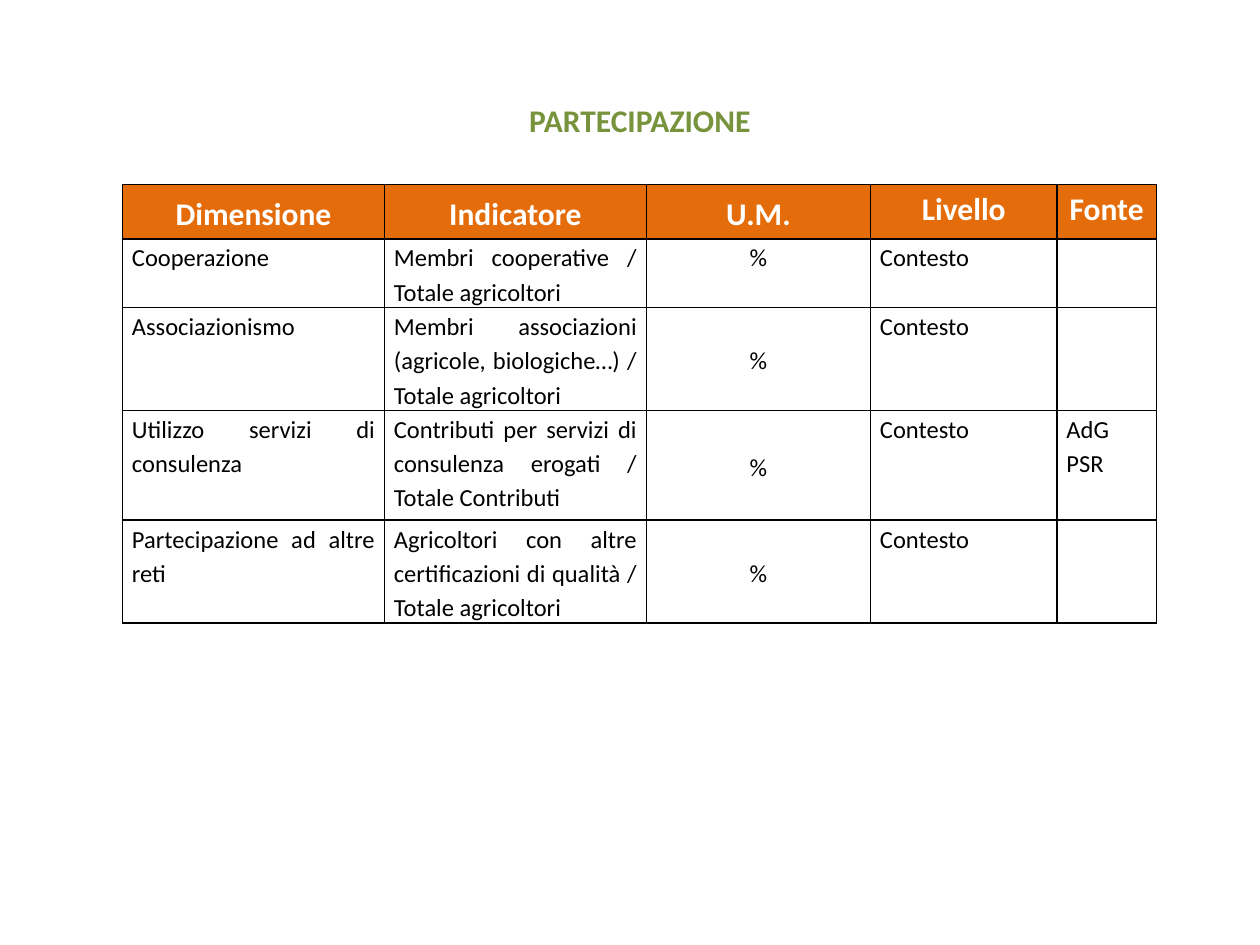
import pptx
import pptx.util
import pptx.dml.color
import pptx.enum.text
import pptx.oxml
import pptx.oxml.ns

Cm = pptx.util.Cm
Pt = pptx.util.Pt
Align = pptx.enum.text.PP_ALIGN
Anchor = pptx.enum.text.MSO_ANCHOR

colors = {"title": "77933C", "header": "E46C0A", "header_text": "FFFFFF",
          "text": "000000", "border": "000000"}


def add_span(para, text, size, color, bold):
    span = para.add_run()
    span.text = text
    span.font.name = "Calibri"
    span.font.size = Pt(size)
    span.font.bold = bold
    span.font.color.rgb = pptx.dml.color.RGBColor.from_string(colors[color])


def add_borders(cell):
    properties = cell._tc.get_or_add_tcPr()
    for side in ("lnL", "lnR", "lnT", "lnB"):
        properties.append(pptx.oxml.parse_xml(
            f'<a:{side} {pptx.oxml.ns.nsdecls("a")} w="{Pt(1)}"><a:solidFill>'
            f'<a:srgbClr val="{colors["border"]}"/></a:solidFill></a:{side}>'))


deck = pptx.Presentation()
deck.slide_width = Cm(25.4)
deck.slide_height = Cm(19.05)
page = deck.slides.add_slide(deck.slide_layouts[5])

title = page.shapes.title
title.left, title.top, title.width, title.height = Cm(6.5), Cm(1.9), Cm(12.8), Cm(1.02)
title.text_frame.vertical_anchor = Anchor.MIDDLE
title_para = title.text_frame.paragraphs[0]
title_para.alignment = Align.CENTER
add_span(title_para, "PARTECIPAZIONE", 18, "title", True)

rows = [
    ("Dimensione", "Indicatore", "U.M.", "Livello", "Fonte"),
    ("Cooperazione", "Membri cooperative / Totale agricoltori", "%", "Contesto", ""),
    ("Associazionismo", "Membri associazioni (agricole, biologiche…) / Totale agricoltori",
     "%", "Contesto", ""),
    ("Utilizzo servizi di consulenza",
     "Contributi per servizi di consulenza erogati / Totale Contributi",
     "%", "Contesto", "AdG PSR"),
    ("Partecipazione ad altre reti",
     "Agricoltori con altre certificazioni di qualità / Totale agricoltori",
     "%", "Contesto", ""),
]
column_widths = [5.28, 5.28, 4.52, 3.76, 2]
row_heights = [1.1, 1.38, 2.07, 2.21, 2.07]
middle_cells = {(0, 0), (0, 1), (0, 2), (2, 2), (3, 2), (4, 2)}

frame = page.shapes.add_table(len(rows), len(column_widths), Cm(2.47), Cm(3.72),
                              Cm(sum(column_widths)), Cm(sum(row_heights)))
table = frame.table
table.first_row = False
table.horz_banding = False
for column, width in zip(table.columns, column_widths):
    column.width = Cm(width)
for row, height in zip(table.rows, row_heights):
    row.height = Cm(height)

for r, texts in enumerate(rows):
    header = r == 0
    for c, text in enumerate(texts):
        cell = table.cell(r, c)
        add_borders(cell)
        if header:
            cell.fill.solid()
            cell.fill.fore_color.rgb = pptx.dml.color.RGBColor.from_string(colors["header"])
        else:
            cell.fill.background()
        cell.margin_left = cell.margin_right = Cm(0.13 if header else 0.19)
        cell.margin_top = cell.margin_bottom = 0
        cell.vertical_anchor = Anchor.MIDDLE if (r, c) in middle_cells else Anchor.TOP
        para = cell.text_frame.paragraphs[0]
        para.alignment = Align.CENTER if header or c == 2 else Align.JUSTIFY
        para.line_spacing = 1.15
        if text:
            add_span(para, text, 18 if header else 14,
                     "header_text" if header else "text", header)

deck.save("out.pptx")
